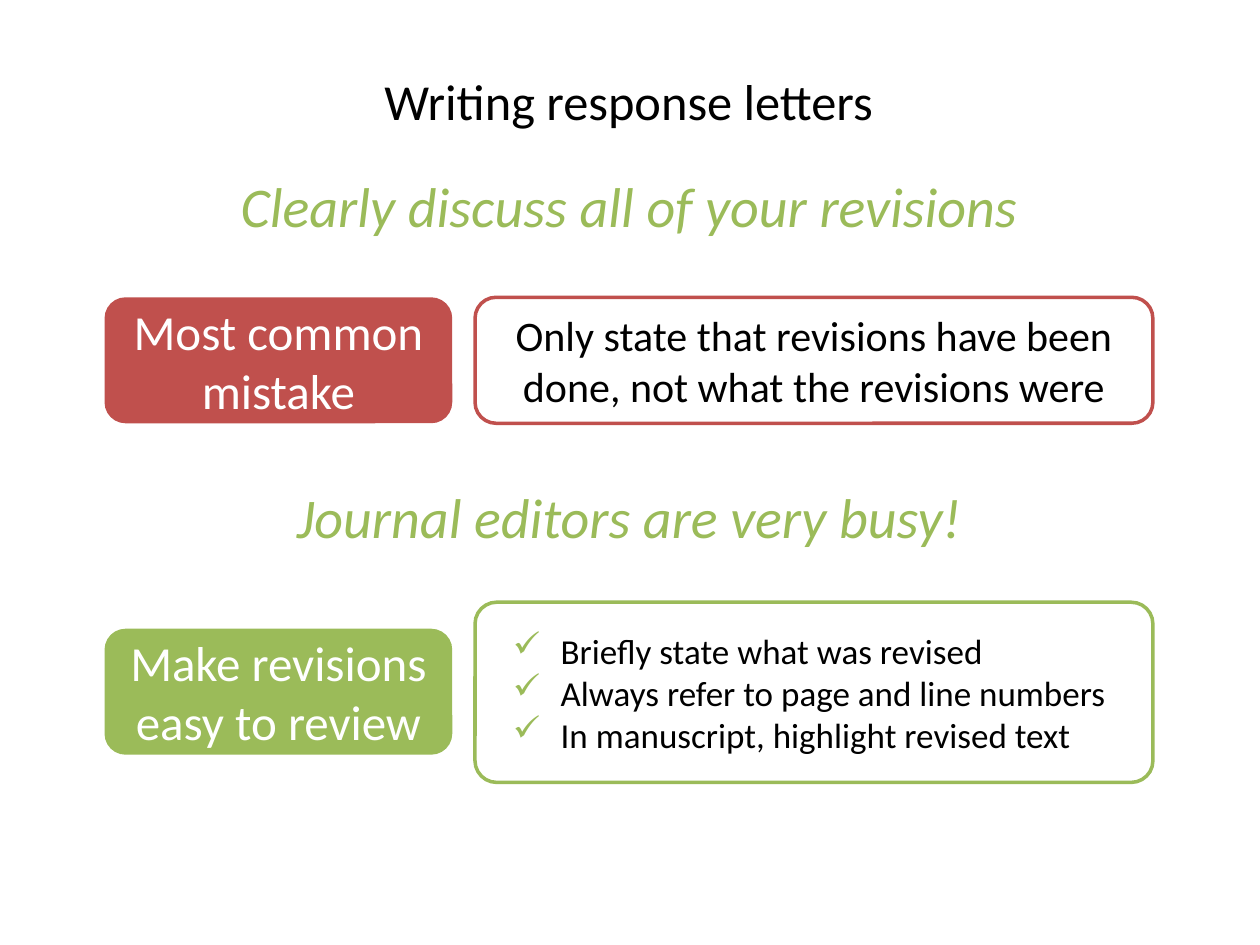
from dataclasses import dataclass
from typing import Any

from lxml.etree import SubElement
from pptx import Presentation
from pptx.dml.color import RGBColor
from pptx.enum.shapes import MSO_SHAPE as Shape
from pptx.enum.text import MSO_ANCHOR as Anchor, PP_ALIGN as Align
from pptx.oxml.ns import qn
from pptx.util import Inches, Pt

CELL = 0.1
COLUMNS, ROWS = 100, 75
RED, GREEN, BLACK, WHITE = "C0504D", "9BBB59", "000000", "FFFFFF"


def color(value):
    return RGBColor.from_string(value)


def cells(count):
    return Inches(count * CELL)


def apply_format(target, values):
    for name, value in values.items():
        setattr(target, name, value)


@dataclass
class SlideBuilder:
    slide: Any
    font: str = "Calibri"
    inset: float = 0.8
    bullet_indent: float = 3.8
    outline: float = 2

    def fill_text(self, shape, lines, size, ink, align=Align.CENTER, italic=False,
                  anchor=Anchor.MIDDLE, left_inset=None):
        frame = shape.text_frame
        margin = cells(self.inset)
        apply_format(frame, {
            "word_wrap": True, "vertical_anchor": anchor,
            "margin_left": margin if left_inset is None else cells(left_inset),
            "margin_right": margin, "margin_top": margin, "margin_bottom": margin,
        })
        for index, line in enumerate(lines):
            paragraph = frame.add_paragraph() if index else frame.paragraphs[0]
            paragraph.alignment = align
            run = paragraph.add_run()
            run.text = line
            apply_format(run.font, {"name": self.font, "size": Pt(size), "italic": italic})
            run.font.color.rgb = color(ink)
        return frame

    def text(self, box, line, size, ink, **options):
        shape = self.slide.shapes.add_textbox(*map(cells, box))
        self.fill_text(shape, [line], size, ink, **options)

    def panel(self, box, lines, size, ink, fill, line=None, corner=None, **options):
        shape = self.slide.shapes.add_shape(Shape.ROUNDED_RECTANGLE, *map(cells, box))
        shape.shadow.inherit = False
        shape.fill.solid()
        shape.fill.fore_color.rgb = color(fill)
        if line:
            shape.line.color.rgb = color(line)
            shape.line.width = Pt(self.outline)
        else:
            shape.line.fill.background()
        if corner is not None:
            shape.adjustments[0] = corner
        return self.fill_text(shape, lines, size, ink, **options)

    def checklist(self, box, lines, size, accent, **options):
        frame = self.panel(box, lines, size, BLACK, WHITE, accent, align=Align.LEFT, **options)
        indent = cells(self.bullet_indent)
        for paragraph in frame.paragraphs:
            properties = paragraph._p.get_or_add_pPr()
            properties.set("marL", str(indent))
            properties.set("indent", str(-indent))
            bullet_color = SubElement(properties, qn("a:buClr"))
            SubElement(bullet_color, qn("a:srgbClr"), val=accent)
            SubElement(properties, qn("a:buChar"), char="✓")


def main():
    presentation = Presentation()
    presentation.slide_width, presentation.slide_height = cells(COLUMNS), cells(ROWS)
    builder = SlideBuilder(presentation.slides.add_slide(presentation.slide_layouts[6]))

    left, label_width, gap, label_height = 8.3, 27.6, 1.8, 10
    detail_left = left + label_width + gap
    detail_width = 53.8
    content_width = label_width + gap + detail_width

    builder.text((left, 5.9, content_width, 4.1), "Writing response letters", 28.8, BLACK)
    for top, message in ((12.8, "Clearly discuss all of your revisions"),
                         (37.5, "Journal editors are very busy!")):
        builder.text((10.6, top, 78.7, 7), message, 32, GREEN, italic=True, anchor=Anchor.TOP)
    for top, label, accent in ((23.6, "Most common mistake", RED),
                               (49.9, "Make revisions easy to review", GREEN)):
        builder.panel((left, top, label_width, label_height), [label], 28, WHITE, accent)

    builder.panel((detail_left, 23.6, detail_width, label_height),
                  ["Only state that revisions have been done, not what the revisions were"],
                  24, BLACK, WHITE, RED)
    builder.checklist((detail_left, 47.8, detail_width, 14.3),
                      ["Briefly state what was revised",
                       "Always refer to page and line numbers",
                       "In manuscript, highlight revised text"],
                      20, GREEN, corner=0.12, left_inset=2.5)
    presentation.save("out.pptx")


if __name__ == "__main__":
    main()
